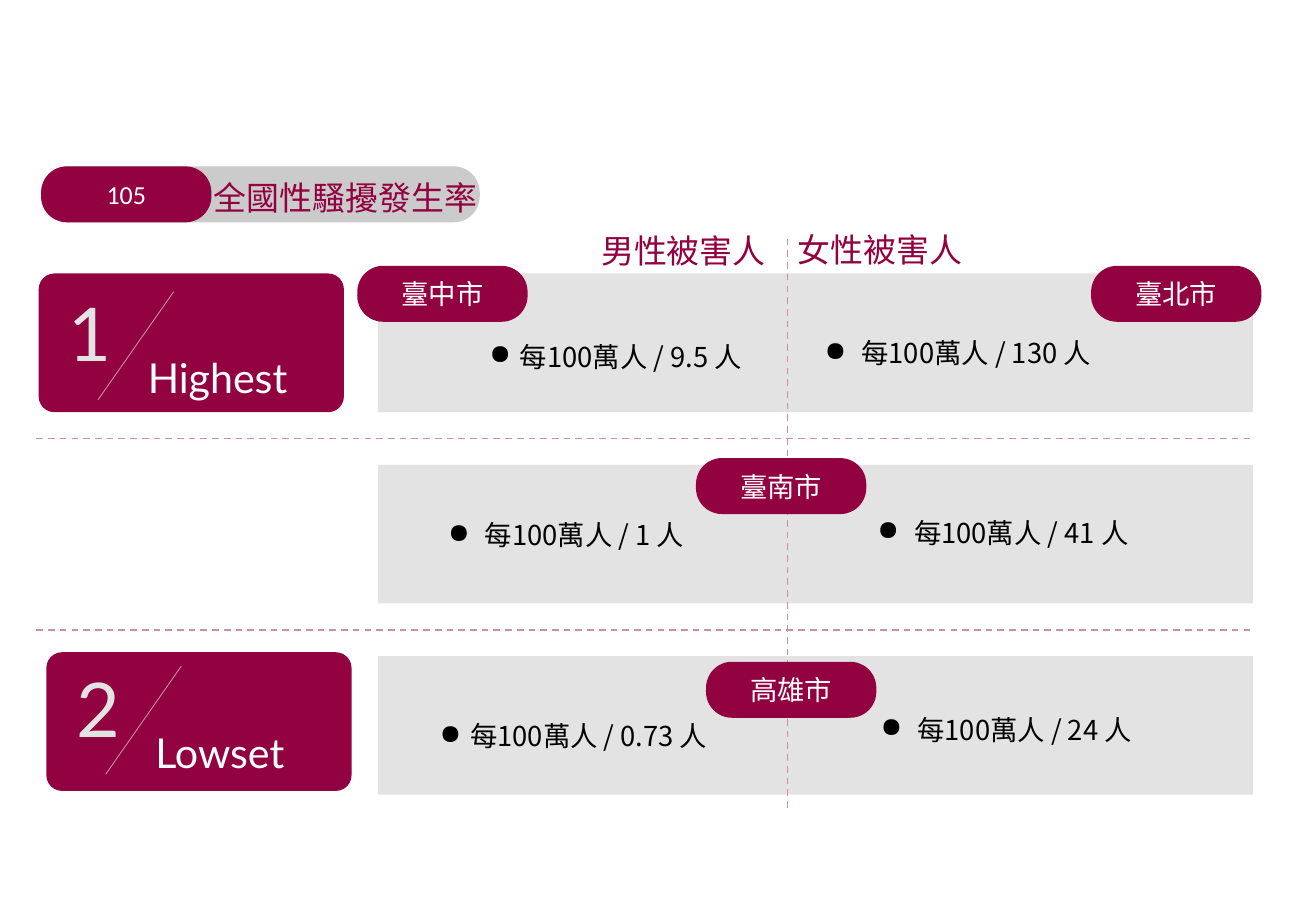
import pptx
import pptx.util
import pptx.dml.color
import pptx.enum.dml
import pptx.enum.shapes
import pptx.enum.text
import pptx.oxml.ns
from lxml import etree

Cm = pptx.util.Cm
Pt = pptx.util.Pt
RGBColor = pptx.dml.color.RGBColor
Kind = pptx.enum.shapes.MSO_SHAPE
Align = pptx.enum.text.PP_ALIGN
Anchor = pptx.enum.text.MSO_ANCHOR
qn = pptx.oxml.ns.qn

WINE = RGBColor(0x92, 0x02, 0x40)
ROSE = RGBColor(0xC9, 0x90, 0xA9)
PALE = RGBColor(0xE3, 0xE3, 0xE3)
GREY = RGBColor(0xCB, 0xCB, 0xCB)
WHITE = RGBColor(0xFF, 0xFF, 0xFF)
BLACK = RGBColor(0x00, 0x00, 0x00)
CJK = "Noto Sans CJK SC"

TITLE = "全國性騷擾發生率"
YEAR = "105"
HEADS = [("男性被害人", 11.84, 4.72), ("女性被害人", 15.95, 4.7)]
CARDS = [
    ("1", 43.9, "Highest", 0.81, 5.72, 0),
    ("2", 44.7, "Lowset", 0.97, 13.64, 0.09),
]
TOWNS = [
    ("臺中市", 7.47, 5.56),
    ("臺北市", 22.81, 5.56),
    ("臺南市", 14.55, 9.58),
    ("高雄市", 14.76, 13.84),
]
FACTS = [
    ("每100萬人 / 9.5 人", 10.03, 7.01, 6.05),
    (" 每100萬人 / 130 人", 17.04, 6.93, 6.96),
    (" 每100萬人 / 1 人", 9.17, 10.74, 6.07),
    (" 每100萬人 / 41 人", 18.14, 10.69, 6.07),
    ("每100萬人 / 0.73 人", 8.99, 14.94, 6.38),
    (" 每100萬人 / 24 人", 18.21, 14.81, 6.07),
]
BAR_X, BAR_Y, BAR_W, BAR_H = 7.9, 5.72, 18.29, 2.9
STEP = 4.0
PILL_W, PILL_H = 3.56, 1.17

deck = pptx.Presentation()
deck.slide_width, deck.slide_height = Cm(27.51), Cm(19.05)
slide = deck.slides.add_slide(deck.slide_layouts[5])
shapes = slide.shapes


def write(shape, text, size, color, font=CJK, align=Align.LEFT,
          anchor=Anchor.TOP, bullet=False):
    frame = shape.text_frame
    frame.word_wrap = True
    frame.auto_size = pptx.enum.text.MSO_AUTO_SIZE.NONE
    frame.vertical_anchor = anchor
    frame.margin_left = frame.margin_right = Cm(0.2)
    frame.margin_top = frame.margin_bottom = Cm(0.1)
    para = frame.paragraphs[0]
    para.text = text
    para.alignment = align
    if bullet:
        props = para._p.get_or_add_pPr()
        props.set("marL", str(Cm(0.64)))
        props.set("indent", str(-Cm(0.64)))
        etree.SubElement(props, qn("a:buChar")).set("char", "●")
    para.font.size = Pt(size)
    para.font.bold = False
    para.font.color.rgb = color
    para.font.name = font
    etree.SubElement(para.font._rPr, qn("a:ea")).set("typeface", CJK)


def label(text, x, y, w, h, size, color, **style):
    box = shapes.add_textbox(Cm(x), Cm(y), Cm(w), Cm(h))
    write(box, text, size, color, **style)


def block(kind, x, y, w, h, fill, curve=None):
    shape = shapes.add_shape(kind, Cm(x), Cm(y), Cm(w), Cm(h))
    shape.shadow.inherit = False
    shape.fill.solid()
    shape.fill.fore_color.rgb = fill
    shape.line.fill.background()
    if curve is not None:
        shape.adjustments[0] = curve
    return shape


def pill(x, y, w=PILL_W, fill=WINE):
    return block(Kind.ROUNDED_RECTANGLE, x, y, w, PILL_H, fill, 0.464)


def badge(text, x, y, size, font=CJK):
    write(pill(x, y), text, size, WHITE, font, Align.CENTER, Anchor.MIDDLE)


def rule(x1, y1, x2, y2, width=1, dash=True):
    line = shapes.add_connector(pptx.enum.shapes.MSO_CONNECTOR.STRAIGHT,
                                Cm(x1), Cm(y1), Cm(x2), Cm(y2))
    line.line.color.rgb = ROSE
    line.line.width = Pt(width)
    if dash:
        line.line.dash_style = pptx.enum.dml.MSO_LINE.DASH
    etree.SubElement(line._element.spPr, qn("a:effectLst"))


for row in range(3):
    top = BAR_Y + row * STEP
    block(Kind.RECTANGLE, BAR_X, top, BAR_W, BAR_H, PALE)
    if row:
        mid = top - (STEP - BAR_H) / 2
        rule(0.76, mid, BAR_X + BAR_W, mid)

for digit, size, word, x, y, lift in CARDS:
    block(Kind.ROUNDED_RECTANGLE, x, y, 6.38, BAR_H, WINE, 0.113)
    y -= lift
    label(digit, x + 0.43, y + 0.2, 0.97, 2.1, size, PALE, font="Lato")
    rule(x + 2.82, y + 0.38, x + 1.24, y + 2.64, 0.5, False)
    label(word, x + 2.08, y + 1.55, 4, 1.3, 24.4, WHITE, font="Lato")

rule(16.46, 16.89, 16.46, 4.98)
for text, x, y in HEADS:
    label(text, x, y, 4.9, 1.04, 19.5, WINE, align=Align.CENTER)
for text, x, y, w in FACTS:
    label(text, x, y, w, 1.6, 16.2, BLACK, bullet=True)
for text, x, y in TOWNS:
    badge(text, x, y, 16.2)

pill(0.86, 3.48, 9.17, GREY)
badge(YEAR, 0.86, 3.48, 15.4, "Calibri")
title = shapes.title
title.left, title.top, title.width, title.height = Cm(4.27), Cm(3.61), Cm(6.38), Cm(1.04)
write(title, TITLE, 19.5, WINE)
title.element.getparent().append(title.element)

deck.save("out.pptx")
